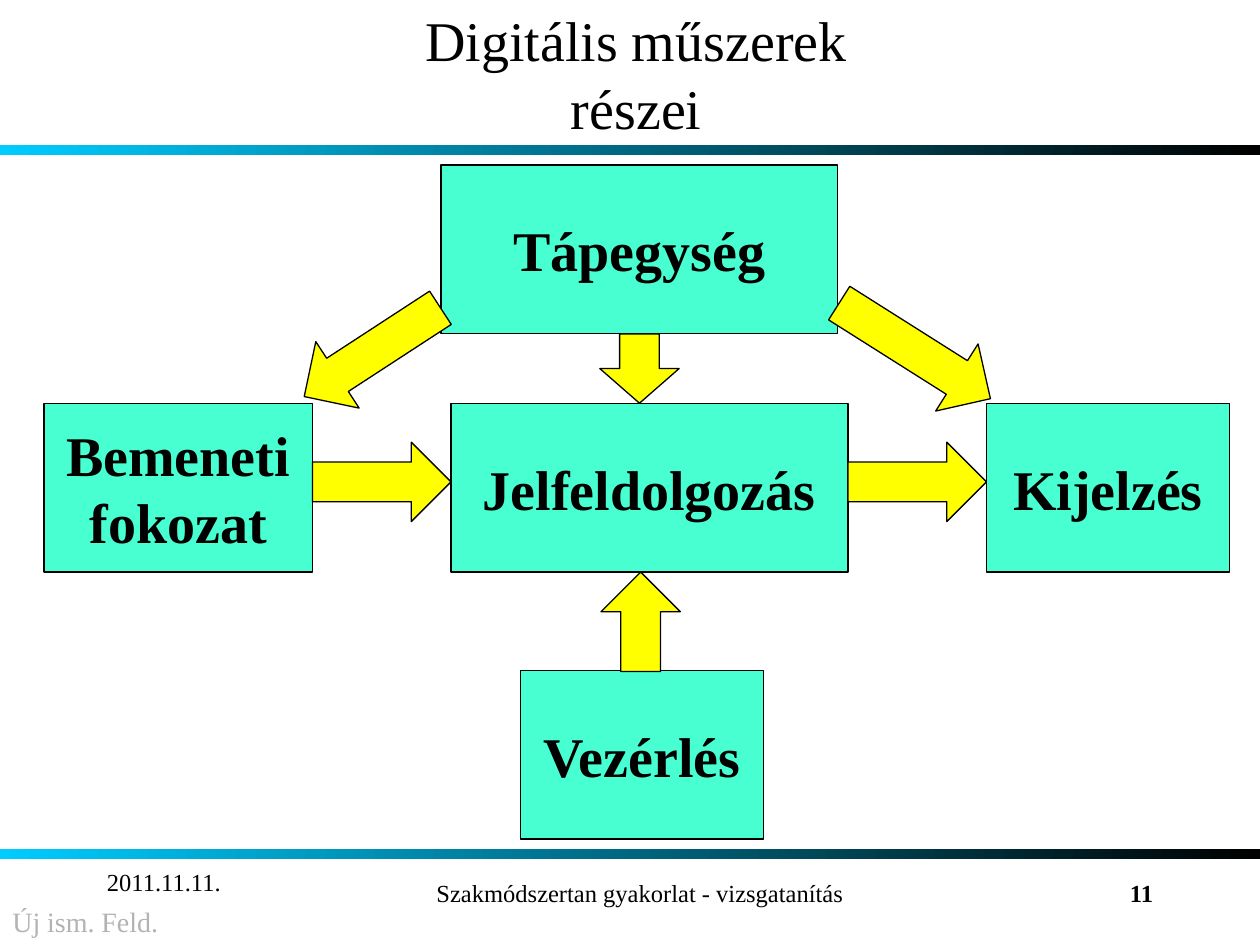
from pptx import Presentation
from pptx.dml.color import RGBColor
from pptx.enum.shapes import MSO_SHAPE as Shape
from pptx.enum.text import MSO_ANCHOR as Anchor, PP_ALIGN as Align
from pptx.util import Inches, Pt

BLACK = RGBColor(0x00, 0x00, 0x00)
CYAN = RGBColor(0x00, 0xCC, 0xFF)
TURQUOISE = RGBColor(0x47, 0xFF, 0xD1)
YELLOW = RGBColor(0xFF, 0xFF, 0x00)
GRAY = RGBColor(0xB3, 0xB3, 0xB3)
SERIF = "Times New Roman"

presentation = Presentation()
presentation.slide_width = Inches(10)
presentation.slide_height = Inches(7.5)
slide = presentation.slides.add_slide(presentation.slide_layouts[6])


def write(shape, text, size, align=Align.LEFT, anchor=Anchor.TOP,
          color=BLACK, bold=False):
    frame = shape.text_frame
    frame.word_wrap = True
    frame.vertical_anchor = anchor
    paragraph = frame.paragraphs[0]
    paragraph.text = text
    paragraph.alignment = align
    for run in paragraph.runs:
        run.font.name = SERIF
        run.font.size = Pt(size)
        run.font.bold = bold
        run.font.color.rgb = color


def add_outlined(kind, left, top, width, height, color):
    shape = slide.shapes.add_shape(
        kind, Inches(left), Inches(top), Inches(width), Inches(height))
    shape.shadow.inherit = False
    shape.fill.solid()
    shape.fill.fore_color.rgb = color
    shape.line.color.rgb = BLACK
    shape.line.width = Pt(0.75)
    return shape


# Gradient bars under the title and above the footer
for top in (1.15, 6.74):
    bar = slide.shapes.add_shape(
        Shape.RECTANGLE, 0, Inches(top), Inches(10), Inches(0.08))
    bar.shadow.inherit = False
    bar.line.fill.background()
    bar.fill.gradient()
    bar.fill.gradient_angle = 0
    for stop, color in zip(bar.fill.gradient_stops, (CYAN, BLACK)):
        stop.color.rgb = color

# Title and footer texts
texts = [
    ((1.3, 0.29, 7.5, 0.58), "Digitális műszerek\nrészei", 32,
     dict(align=Align.CENTER, anchor=Anchor.MIDDLE)),
    ((0.75, 6.83, 2.08, 0.5), "2011.11.11.", 14, {}),
    ((2.08, 6.92, 6, 0.42), "Szakmódszertan gyakorlat - vizsgatanítás", 14,
     dict(align=Align.CENTER)),
    ((7.17, 6.92, 2.08, 0.42), "11", 14, dict(align=Align.RIGHT, bold=True)),
    ((0, 7.13, 2.01, 0.37), "Új ism. Feld.", 16, dict(color=GRAY)),
]
for position, text, size, style in texts:
    box = slide.shapes.add_textbox(*map(Inches, position))
    write(box, text, size, **style)

# Blocks of the diagram
blocks = [
    ("Bemeneti fokozat", 0.35, 3.2, 2.13),
    ("Jelfeldolgozás", 3.58, 3.2, 3.15),
    ("Tápegység", 3.5, 1.31, 3.15),
    ("Kijelzés", 7.83, 3.2, 1.93),
    ("Vezérlés", 4.13, 5.32, 1.93),
]
for label, left, top, width in blocks:
    block = add_outlined(Shape.RECTANGLE, left, top, width, 1.34, TURQUOISE)
    write(block, label, 32, Align.CENTER, Anchor.MIDDLE, bold=True)

# Arrows between the blocks: left, top, length, rotation
arrows = [
    (4.69, 4.62, 0.79, 270),
    (2.48, 3.51, 1.1, 0),
    (6.73, 3.51, 1.1, 0),
    (2.31, 2.48, 1.29, 146.9),
    (6.55, 2.47, 1.42, 32.3),
    (4.8, 2.61, 0.55, 90),
]
for left, top, length, rotation in arrows:
    arrow = add_outlined(Shape.RIGHT_ARROW, left, top, length, 0.63, YELLOW)
    arrow.rotation = rotation

presentation.save("out.pptx")
